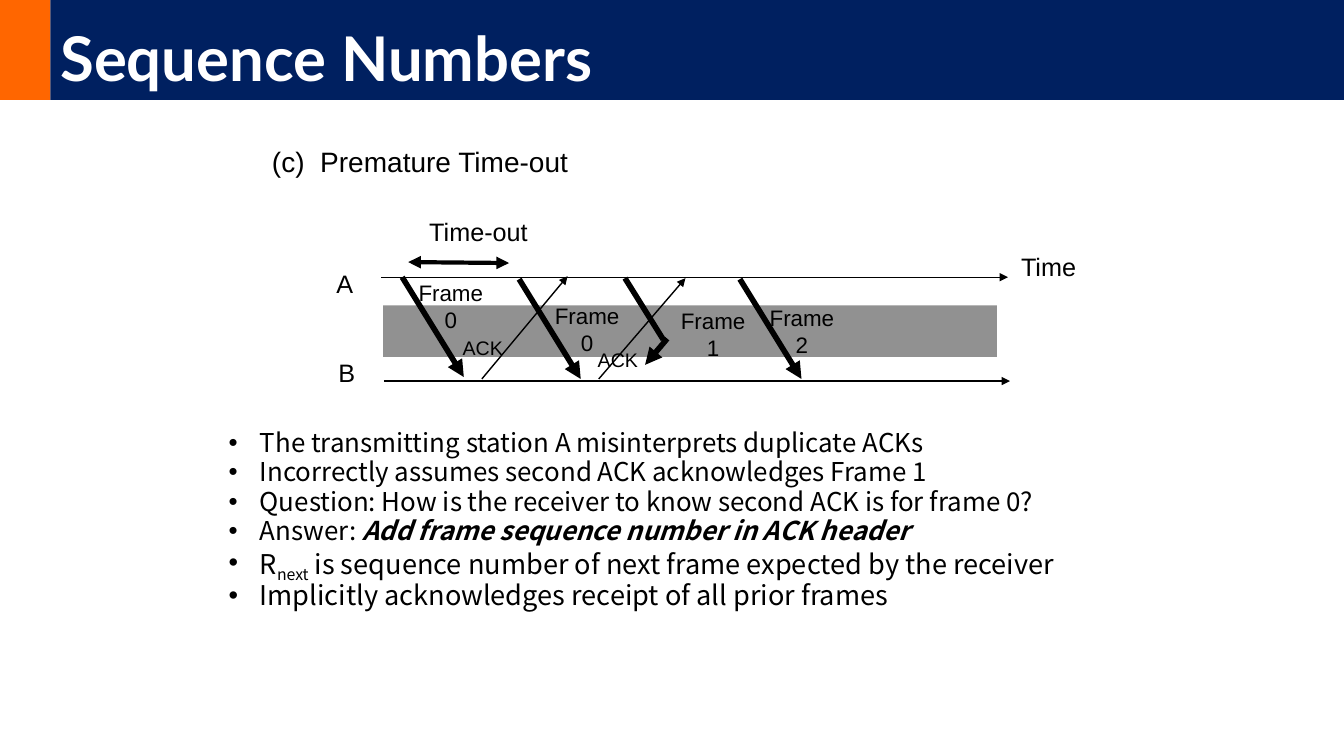
import pptx
import pptx.util
import pptx.dml.color
import pptx.enum.shapes
import pptx.enum.text
import pptx.oxml.ns
import lxml.etree

Pt = pptx.util.Pt
ALIGN = pptx.enum.text.PP_ALIGN
ANCHOR = pptx.enum.text.MSO_ANCHOR


def color(hex_string):
    return pptx.dml.color.RGBColor.from_string(hex_string)


def add_element(parent, tag, **attributes):
    element = lxml.etree.SubElement(parent, pptx.oxml.ns.qn(tag))
    for name, value in attributes.items():
        element.set(name, value)
    return element


def add_rectangle(slide, left, top, width, height, fill):
    shape = slide.shapes.add_shape(
        pptx.enum.shapes.MSO_SHAPE.RECTANGLE, Pt(left), Pt(top), Pt(width), Pt(height))
    shape.shadow.inherit = False
    shape.fill.solid()
    shape.fill.fore_color.rgb = color(fill)
    shape.line.fill.background()
    return shape


def add_run(paragraph, text, size=18, font="Arial", fill="000000", bold=False,
            italic=False, baseline=None):
    run = paragraph.add_run()
    run.text = text
    run.font.size = Pt(size)
    run.font.name = font
    run.font.color.rgb = color(fill)
    run.font.bold = bold
    run.font.italic = italic
    if baseline:
        run._r.get_or_add_rPr().set("baseline", str(baseline))


def add_label(slide, text, left, top, width, height=28.8, align=ALIGN.LEFT, **style):
    """Add an unwrapped text box with one paragraph per line of text."""
    frame = slide.shapes.add_textbox(Pt(left), Pt(top), Pt(width), Pt(height)).text_frame
    frame.word_wrap = False
    for index, line in enumerate(text.split("\n")):
        paragraph = frame.add_paragraph() if index else frame.paragraphs[0]
        paragraph.alignment = align
        add_run(paragraph, line, **style)


def add_arrow(slide, start, end, width=1, head=False, tail=True):
    connector = slide.shapes.add_connector(
        pptx.enum.shapes.MSO_CONNECTOR.STRAIGHT,
        Pt(start[0]), Pt(start[1]), Pt(end[0]), Pt(end[1]))
    connector.line.color.rgb = color("000000")
    connector.line.width = Pt(width)
    line = connector.line._get_or_add_ln()
    if head:
        add_element(line, "a:headEnd", type="triangle")
    if tail:
        add_element(line, "a:tailEnd", type="triangle")
    add_element(connector._element.spPr, "a:effectLst")


def add_title_bar(slide, left, top, width, height):
    accent_width = 36
    add_rectangle(slide, left, top, accent_width, height, "FF6600")
    bar = add_rectangle(slide, left + accent_width, top, width - accent_width, height, "002060")
    frame = bar.text_frame
    frame.word_wrap = True
    frame.vertical_anchor = ANCHOR.BOTTOM
    paragraph = frame.paragraphs[0]
    paragraph.alignment = ALIGN.LEFT
    paragraph.line_spacing = 0.9
    add_run(paragraph, "Sequence Numbers", size=44, font="Lato", fill="FFFFFF", bold=True)


def add_timing_diagram(slide, left, top):
    """Draw the exchange between stations A and B, measured from its top left corner."""
    def at(x, y):
        return left + x, top + y

    add_rectangle(slide, *at(40.6, 67.2), 438.5, 36.7, "919191")
    add_arrow(slide, at(39.2, 47), at(487, 47))
    add_arrow(slide, at(41.3, 121.2), at(488.4, 121.2))

    for text, x, y, width in [("A", 0.3, 37, 26.6), ("B", 1.7, 101, 26.6),
                              ("Time", 489.2, 24.7, 54), ("Time-out", 66.5, 0.2, 85)]:
        add_label(slide, text, *at(x, y), width)

    frame_run, frame_drop = 44, 71.3
    for x, y in [(54.3, 47), (137.8, 48.4), (295.5, 48.4)]:
        add_arrow(slide, at(x, y), at(x + frame_run, y + frame_drop), width=4)
    add_arrow(slide, at(213.4, 47.7), at(240.8, 91.6), width=4, tail=False)
    add_arrow(slide, at(243.6, 90.9), at(227.8, 109.6), width=4)

    add_arrow(slide, at(111.2, 119.7), at(172.4, 46.3))
    add_arrow(slide, at(194.7, 119.7), at(256.6, 47.7))
    add_arrow(slide, at(58.6, 36.2), at(130.6, 36.9), width=3, head=True)

    frame_width, ack_width = 61.2, 43.2
    for number, center, y in [(0, 89, 44.8), (0, 186.4, 61.4),
                              (1, 276.4, 65), (2, 339.8, 62.8)]:
        add_label(slide, f"Frame\n{number}", *at(center - frame_width / 2, y),
                  frame_width, 46, align=ALIGN.CENTER, size=16)
    for center, y in [(111.9, 85.2), (208.4, 93.8)]:
        add_label(slide, "ACK", *at(center - ack_width / 2, y),
                  ack_width, 23.8, align=ALIGN.CENTER, size=14)


def add_bullets(slide, left, top, width, height):
    bullets = [
        (18.5, [("The transmitting station A misinterprets duplicate ACKs", {})]),
        (18.5, [("Incorrectly assumes second ACK acknowledges Frame 1", {})]),
        (18.5, [("Question: How is the receiver to know second ACK is for frame 0?", {})]),
        (18.5, [("Answer: ", {}),
                ("Add frame sequence number in ACK header", {"bold": True, "italic": True})]),
        (19.4, [("R", {}), ("next", {"baseline": -25000}),
                (" is sequence number of next frame expected by the receiver", {})]),
        (19.4, [("Implicitly acknowledges receipt of all prior frames", {})]),
    ]
    frame = slide.shapes.add_textbox(Pt(left), Pt(top), Pt(width), Pt(height)).text_frame
    frame.word_wrap = True
    for index, (size, runs) in enumerate(bullets):
        paragraph = frame.add_paragraph() if index else frame.paragraphs[0]
        paragraph.line_spacing = 0.9
        paragraph.space_before = Pt(1)
        properties = paragraph._p.get_or_add_pPr()
        properties.set("marL", str(Pt(58.3)))
        properties.set("indent", str(Pt(-22.3)))
        add_element(properties, "a:buFont", typeface="Arial")
        add_element(properties, "a:buChar", char="•")
        for text, style in runs:
            add_run(paragraph, text, size=size, font="Noto Sans CJK KR", **style)


def main():
    presentation = pptx.Presentation()
    presentation.slide_width = Pt(960)
    presentation.slide_height = Pt(540)
    slide = presentation.slides.add_slide(presentation.slide_layouts[6])
    add_title_bar(slide, 0, 0, 960, 71.3)
    add_bullets(slide, 120.2, 303.5, 701.3, 168.5)
    add_label(slide, "(c)\u00a0 Premature Time-out".replace("\u00a0", " "),
              187.2, 100, 226, 31, size=20)
    add_timing_diagram(slide, 233, 151)
    presentation.save("out.pptx")


if __name__ == "__main__":
    main()
